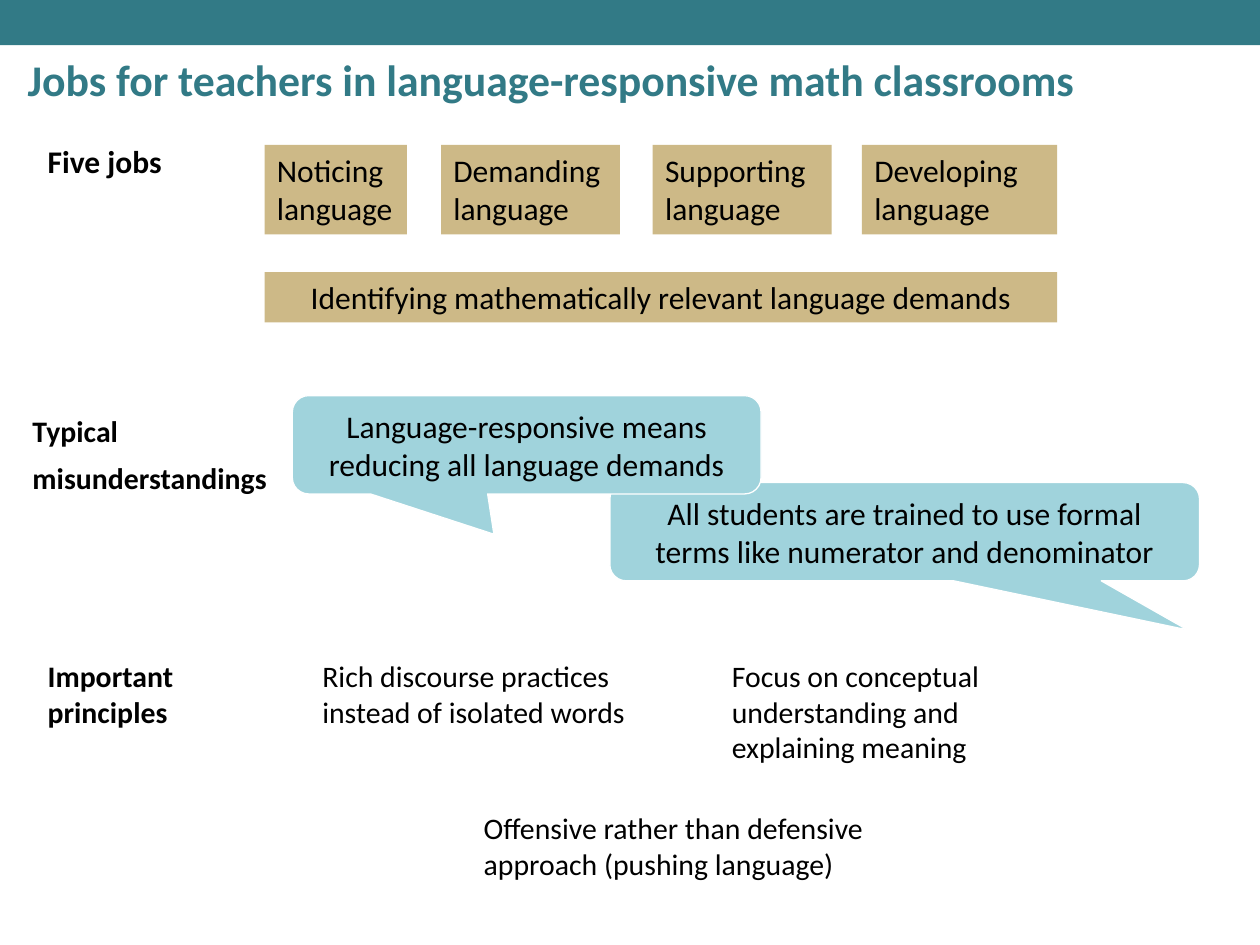
from pptx import Presentation
from pptx.dml.color import RGBColor
from pptx.enum.shapes import MSO_SHAPE as Shape
from pptx.enum.text import MSO_ANCHOR as Anchor, PP_ALIGN as Align
from pptx.util import Inches, Pt

TEAL = RGBColor(0x32, 0x7A, 0x86)
SAND = RGBColor(0xCD, 0xB9, 0x87)
SKY = RGBColor(0xA0, 0xD3, 0xDC)
WHITE = RGBColor(0xFF, 0xFF, 0xFF)
BLACK = RGBColor(0, 0, 0)

# Content: a "\v" is a line break, a "\n" a new paragraph
TITLE = "Jobs for teachers in language-responsive math classrooms"
JOBS = [  # text, left, width
    ("Noticing\vlanguage", 2.1, 1.13),
    ("Demanding language", 3.5, 1.42),
    ("Supporting\vlanguage", 5.18, 1.42),
    ("Developing language", 6.84, 1.55),
]
BASE_JOB = "Identifying mathematically relevant language demands"
LABELS = [  # text, box, size
    ("Five jobs", (0.28, 1.08, 1.17, 0.4), 18),
    ("Typical\nmisunderstandings", (0.16, 3.23, 2.07, 0.76), 17),
    ("Important\vprinciples", (0.28, 5.17, 1.26, 0.67), 17),
]
MYTHS = [  # text, box, tip of the callout; the last lies on top
    ("All students are trained to use formal terms like numerator and denominator",
     (4.84, 3.83, 4.68, 0.78), (0.48, 1)),
    ("Language-responsive means reducing all language demands",
     (2.32, 3.14, 3.72, 0.78), (-0.07, 0.91)),
]
RULES = [  # text, box
    ("Rich discourse practices instead of isolated words", (2.46, 5.17, 2.76, 0.67)),
    ("Focus on conceptual understanding and explaining meaning",
     (5.71, 5.17, 2.76, 0.96)),
    ("Offensive rather than defensive approach (pushing language)",
     (3.74, 6.38, 3.24, 0.67)),
]

deck = Presentation()
deck.slide_width, deck.slide_height = Inches(10), Inches(7.5)
slide = deck.slides.add_slide(deck.slide_layouts[5])


def write(shape, text, size=18, color=BLACK, bold=False, align=Align.LEFT,
          anchor=Anchor.TOP, wrap=True):
    frame = shape.text_frame
    frame.word_wrap = wrap
    frame.vertical_anchor = anchor
    frame.text = text
    for i, para in enumerate(frame.paragraphs):
        para.alignment = align
        para.space_before = Pt(6 if i else 0)
        for run in para.runs:
            font = run.font
            font.name, font.size, font.bold = "Calibri", Pt(size), bold
            font.color.rgb = color


def draw(kind, box, fill, line=None):
    shape = slide.shapes.add_shape(kind, *map(Inches, box))
    shape.shadow.inherit = False
    shape.fill.solid()
    shape.fill.fore_color.rgb = fill
    if line is None:
        shape.line.fill.background()
    else:
        shape.line.color.rgb = line
        shape.line.width = Pt(0.75)
    return shape


def note(box, text, **form):
    write(slide.shapes.add_textbox(*map(Inches, box)), text, **form)


# Top bar and title
draw(Shape.RECTANGLE, (0, 0, 10, 0.36), TEAL)
title = slide.shapes.title
title.left, title.top, title.width, title.height = map(Inches, (0.12, 0.36, 9.21, 0.54))
write(title, TITLE, size=25, color=TEAL, bold=True, anchor=Anchor.MIDDLE)

# Row labels
for text, box, size in LABELS:
    note(box, text, size=size, bold=True, wrap=False)

# Four jobs, with the fifth below them all
for text, left, width in JOBS:
    write(draw(Shape.RECTANGLE, (left, 1.15, width, 0.71), SAND), text)
start = JOBS[0][1]
end = JOBS[-1][1] + JOBS[-1][2]
base = draw(Shape.RECTANGLE, (start, 2.16, end - start, 0.4), SAND)
write(base, BASE_JOB, align=Align.CENTER)

# Misunderstandings
for text, box, tip in MYTHS:
    bubble = draw(Shape.ROUNDED_RECTANGULAR_CALLOUT, box, SKY, WHITE)
    for i, value in enumerate((*tip, 0.167)):
        bubble.adjustments[i] = value
    write(bubble, text, align=Align.CENTER, anchor=Anchor.MIDDLE)

# Principles
for text, box in RULES:
    note(box, text, size=17)

deck.save("out.pptx")
